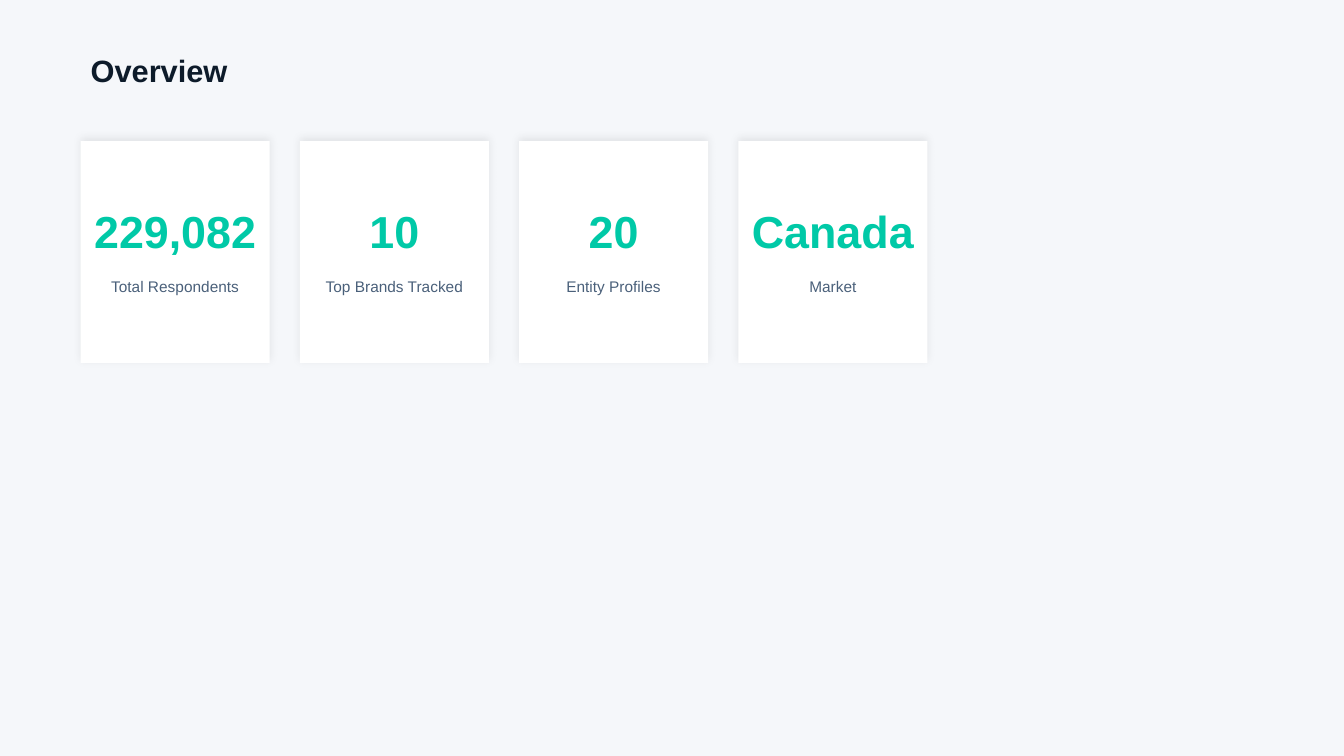
from lxml import etree
from pptx import Presentation
from pptx.dml.color import RGBColor
from pptx.enum.shapes import MSO_SHAPE
from pptx.enum.text import MSO_ANCHOR, MSO_AUTO_SIZE, PP_ALIGN
from pptx.oxml.ns import qn
from pptx.util import Pt

HEADING = "Overview"
METRICS = [
    ("229,082", "Total Respondents"),
    ("10", "Top Brands Tracked"),
    ("20", "Entity Profiles"),
    ("Canada", "Market"),
]

FONT = "Arial"
BACKGROUND = RGBColor(0xF5, 0xF7, 0xFA)
NAVY = RGBColor(0x0D, 0x1B, 0x2A)
TEAL = RGBColor(0x00, 0xC9, 0xA7)
SLATE = RGBColor(0x4A, 0x60, 0x7A)
WHITE = RGBColor(0xFF, 0xFF, 0xFF)

RECTANGLE = MSO_SHAPE.RECTANGLE
TOP, MIDDLE, BOTTOM = MSO_ANCHOR.TOP, MSO_ANCHOR.MIDDLE, MSO_ANCHOR.BOTTOM
LEFT, CENTER = PP_ALIGN.LEFT, PP_ALIGN.CENTER
NO_AUTOFIT = MSO_AUTO_SIZE.NONE

SLIDE_W, SLIDE_H = 960, 540
MARGIN = 57.6
CONTENT_W = 604.8
CARD_TOP, CARD_H = 100.8, 158.4
CARD_GAP = 21.6
CARD_W = (CONTENT_W - CARD_GAP * (len(METRICS) - 1)) / len(METRICS)
VALUE_TOP, VALUE_H = 115.2, 72
LABEL_TOP, LABEL_H = 194.4, 50.4


def write(box, text, size, color, bold, align, anchor):
    frame = box.text_frame
    frame.text = text
    frame.word_wrap = True
    frame.auto_size = NO_AUTOFIT
    frame.vertical_anchor = anchor
    paragraph = frame.paragraphs[0]
    paragraph.alignment = align
    font = paragraph.runs[0].font
    font.name, font.size, font.bold = FONT, Pt(size), bold
    font.color.rgb = color


def add_soft_shadow(shape):
    """Give the shape a faint shadow that falls upwards."""
    shape.shadow.inherit = False
    effects = shape._element.spPr.find(qn("a:effectLst"))
    shadow = etree.SubElement(
        effects, qn("a:outerShdw"), blurRad=str(Pt(6)), dist=str(Pt(2)),
        dir=str(270 * 60000), algn="bl", rotWithShape="0")
    color = etree.SubElement(shadow, qn("a:srgbClr"), val="000000")
    etree.SubElement(color, qn("a:alpha"), val="8000")


def add_metric(slide, left, value, label):
    card = slide.shapes.add_shape(
        RECTANGLE, Pt(left), Pt(CARD_TOP), Pt(CARD_W), Pt(CARD_H))
    card.fill.solid()
    card.fill.fore_color.rgb = WHITE
    card.line.fill.background()
    add_soft_shadow(card)

    for text, top, height, size, color, bold, anchor in (
        (value, VALUE_TOP, VALUE_H, 32, TEAL, True, BOTTOM),
        (label, LABEL_TOP, LABEL_H, 11, SLATE, False, TOP),
    ):
        box = slide.shapes.add_textbox(
            Pt(left), Pt(top), Pt(CARD_W), Pt(height))
        write(box, text, size, color, bold, CENTER, anchor)


def main():
    deck = Presentation()
    deck.slide_width, deck.slide_height = Pt(SLIDE_W), Pt(SLIDE_H)
    slide = deck.slides.add_slide(deck.slide_layouts.get_by_name("Title Only"))
    slide.background.fill.solid()
    slide.background.fill.fore_color.rgb = BACKGROUND

    heading = slide.shapes.title
    heading.left, heading.top = Pt(MARGIN), Pt(28.8)
    heading.width, heading.height = Pt(CONTENT_W), Pt(43.2)
    write(heading, HEADING, 22, NAVY, True, LEFT, MIDDLE)

    for column, (value, label) in enumerate(METRICS):
        add_metric(slide, MARGIN + column * (CARD_W + CARD_GAP), value, label)

    deck.save("out.pptx")


if __name__ == "__main__":
    main()
